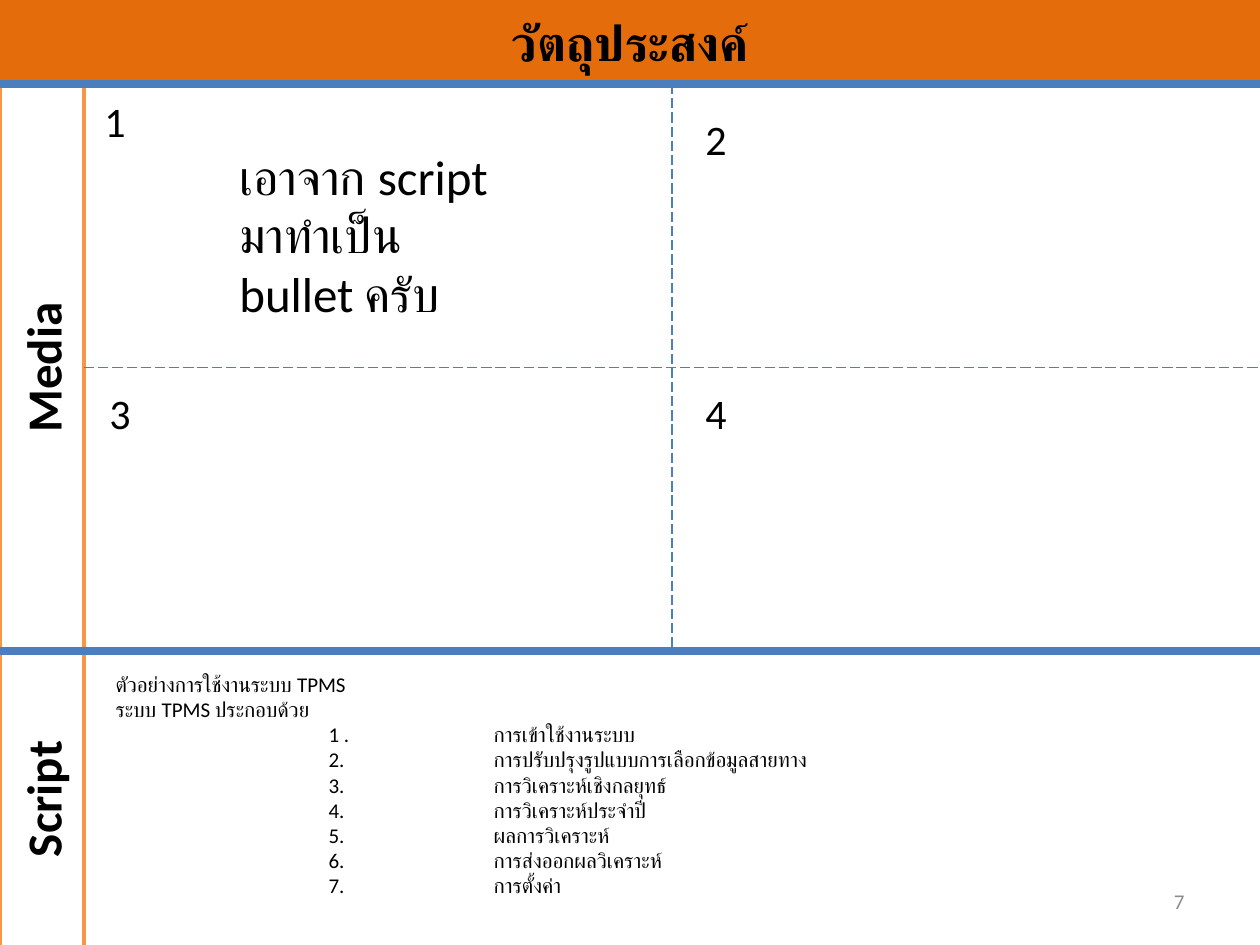
from dataclasses import dataclass

from lxml.etree import SubElement
from pptx import Presentation
from pptx.dml.color import RGBColor
from pptx.enum.dml import MSO_LINE
from pptx.enum.shapes import MSO_CONNECTOR, MSO_SHAPE
from pptx.enum.text import MSO_ANCHOR, MSO_AUTO_SIZE, PP_ALIGN
from pptx.oxml.ns import qn
from pptx.shapes.autoshape import Shape
from pptx.shapes.connector import Connector
from pptx.slide import Slide
from pptx.text.text import _Paragraph as Paragraph
from pptx.util import Emu, Pt


@dataclass(frozen=True)
class Theme:
    font: str = "Calibri"
    text: RGBColor = RGBColor(0x00, 0x00, 0x00)
    muted: RGBColor = RGBColor(0x8C, 0x8C, 0x8C)
    paper: RGBColor = RGBColor(0xFF, 0xFF, 0xFF)
    banner: RGBColor = RGBColor(0xE4, 0x6C, 0x0A)
    frame: RGBColor = RGBColor(0xF7, 0x96, 0x46)
    rule: RGBColor = RGBColor(0x4B, 0x7E, 0xBC)
    heading_size: int = 28
    number_size: int = 24
    script_size: int = 12


@dataclass(frozen=True)
class Box:
    left: int
    top: int
    width: int
    height: int


@dataclass(frozen=True)
class Band:
    label: str
    box: Box


@dataclass(frozen=True)
class Label:
    text: str
    box: Box
    size: int


THEME = Theme()
PX_PER_INCH = 126
SLIDE_WIDTH, SLIDE_HEIGHT = 1260, 945
BANNER_BOTTOM, MEDIA_BOTTOM = 84, 651
SIDEBAR, PANEL_SPLIT = 84, 672
NUMBER_INDENT, ITEM_INDENT = 213, 378

BANDS = [
    Band("Media", Box(0, BANNER_BOTTOM, SIDEBAR, MEDIA_BOTTOM - BANNER_BOTTOM)),
    Band("Script", Box(0, MEDIA_BOTTOM, SIDEBAR, 296)),
]
LABELS = [
    Label("1", Box(92, 89, 42, 63), THEME.number_size),
    Label("2", Box(693, 107, 42, 63), THEME.number_size),
    Label("3", Box(97, 381, 42, 63), THEME.number_size),
    Label("4", Box(693, 381, 42, 63), THEME.number_size),
    Label("เอาจาก script มาทำเป็น bullet ครับ", Box(227, 140, 305, 251), THEME.heading_size),
]
SCRIPT_INTRO = ["ตัวอย่างการใช้งานระบบ TPMS", "ระบบ TPMS ประกอบด้วย"]
SCRIPT_ITEMS = [
    ("1 .", "การเข้าใช้งานระบบ"),
    ("2.", "การปรับปรุงรูปแบบการเลือกข้อมูลสายทาง"),
    ("3.", "การวิเคราะห์เชิงกลยุทธ์"),
    ("4.", "การวิเคราะห์ประจำปี"),
    ("5.", "ผลการวิเคราะห์"),
    ("6.", "การส่งออกผลวิเคราะห์"),
    ("7.", "การตั้งค่า"),
]


def px(length: int) -> Emu:
    return Emu(round(length * 914400 / PX_PER_INCH))


def place(shape: Shape, box: Box) -> None:
    shape.left, shape.top = px(box.left), px(box.top)
    shape.width, shape.height = px(box.width), px(box.height)


def format_text(paragraph: Paragraph, size: int, color: RGBColor = THEME.text,
                bold: bool = False, align: PP_ALIGN = PP_ALIGN.LEFT) -> None:
    paragraph.alignment = align
    font = paragraph.font
    font.name, font.size, font.bold = THEME.font, Pt(size), bold
    font.color.rgb = color


def set_title(slide: Slide, text: str) -> None:
    title = slide.shapes.title
    place(title, Box(0, 0, SLIDE_WIDTH, BANNER_BOTTOM))
    title.fill.solid()
    title.fill.fore_color.rgb = THEME.banner
    title.text_frame.text = text
    title.text_frame.vertical_anchor = MSO_ANCHOR.MIDDLE
    format_text(title.text_frame.paragraphs[0], THEME.heading_size, bold=True,
                align=PP_ALIGN.CENTER)


def add_band(slide: Slide, band: Band) -> Shape:
    """Add a sidebar section whose label reads upwards."""
    shape = slide.shapes.add_shape(MSO_SHAPE.RECTANGLE, 0, 0, 0, 0)
    place(shape, band.box)
    shape.shadow.inherit = False
    shape.fill.solid()
    shape.fill.fore_color.rgb = THEME.paper
    shape.line.color.rgb = THEME.frame
    shape.line.width = Pt(2)
    frame = shape.text_frame
    frame.text = band.label
    frame.vertical_anchor = MSO_ANCHOR.MIDDLE
    shape.element.txBody.bodyPr.set("vert", "vert270")
    format_text(frame.paragraphs[0], THEME.heading_size, bold=True, align=PP_ALIGN.CENTER)
    return shape


def add_rule(slide: Slide, start: tuple[int, int], end: tuple[int, int],
             width: float, dashed: bool = False) -> Connector:
    rule = slide.shapes.add_connector(
        MSO_CONNECTOR.STRAIGHT, *(px(value) for value in (*start, *end)))
    rule.line.color.rgb = THEME.rule
    rule.line.width = Pt(width)
    if dashed:
        rule.line.dash_style = MSO_LINE.LONG_DASH
    SubElement(rule.element.spPr, qn("a:effectLst"))
    return rule


def add_label(slide: Slide, label: Label) -> Shape:
    shape = slide.shapes.add_textbox(0, 0, 0, 0)
    place(shape, label.box)
    shape.text_frame.word_wrap = True
    shape.text_frame.text = label.text
    format_text(shape.text_frame.paragraphs[0], label.size)
    return shape


def fill_script(shape: Shape) -> None:
    """Write the narration, with numbers and items on two indents."""
    place(shape, Box(103, 665, 1113, 267))
    frame = shape.text_frame
    frame.auto_size = MSO_AUTO_SIZE.NONE
    items = [f"{number}\t{item}" for number, item in SCRIPT_ITEMS]
    frame.text = "\n".join(SCRIPT_INTRO + items)
    for index, paragraph in enumerate(frame.paragraphs):
        format_text(paragraph, THEME.script_size)
        paragraph.space_before = Pt(0)
        listed = index >= len(SCRIPT_INTRO)
        properties = paragraph._p.get_or_add_pPr()
        properties.set("marL", str(px(ITEM_INDENT) if listed else 0))
        properties.set("indent", str(px(NUMBER_INDENT - ITEM_INDENT) if listed else 0))
        SubElement(properties, qn("a:buNone"))
        # Default run properties must follow the bullet setting.
        properties.append(properties.find(qn("a:defRPr")))


def main() -> None:
    presentation = Presentation()
    presentation.slide_width, presentation.slide_height = px(SLIDE_WIDTH), px(SLIDE_HEIGHT)
    slide = presentation.slides.add_slide(presentation.slide_layouts[1])

    set_title(slide, "วัตถุประสงค์")
    fill_script(slide.placeholders[1])
    media, _ = [add_band(slide, band) for band in BANDS]

    add_rule(slide, (-44, BANNER_BOTTOM), (1281, BANNER_BOTTOM), 4.5)
    add_rule(slide, (-21, MEDIA_BOTTOM), (1281, MEDIA_BOTTOM), 4.5)
    middle = (BANNER_BOTTOM + MEDIA_BOTTOM) // 2
    divider = add_rule(slide, (SIDEBAR, middle), (SLIDE_WIDTH, middle), 0.75, dashed=True)
    divider.begin_connect(media, 3)
    divider.end_y = divider.begin_y
    add_rule(slide, (PANEL_SPLIT, BANNER_BOTTOM), (PANEL_SPLIT, MEDIA_BOTTOM), 0.75, dashed=True)

    for label in LABELS:
        add_label(slide, label)
    page = add_label(slide, Label("7", Box(903, 876, 294, 50), THEME.script_size))
    page.text_frame.vertical_anchor = MSO_ANCHOR.MIDDLE
    format_text(page.text_frame.paragraphs[0], THEME.script_size, THEME.muted,
                align=PP_ALIGN.RIGHT)

    presentation.save("out.pptx")


if __name__ == "__main__":
    main()
